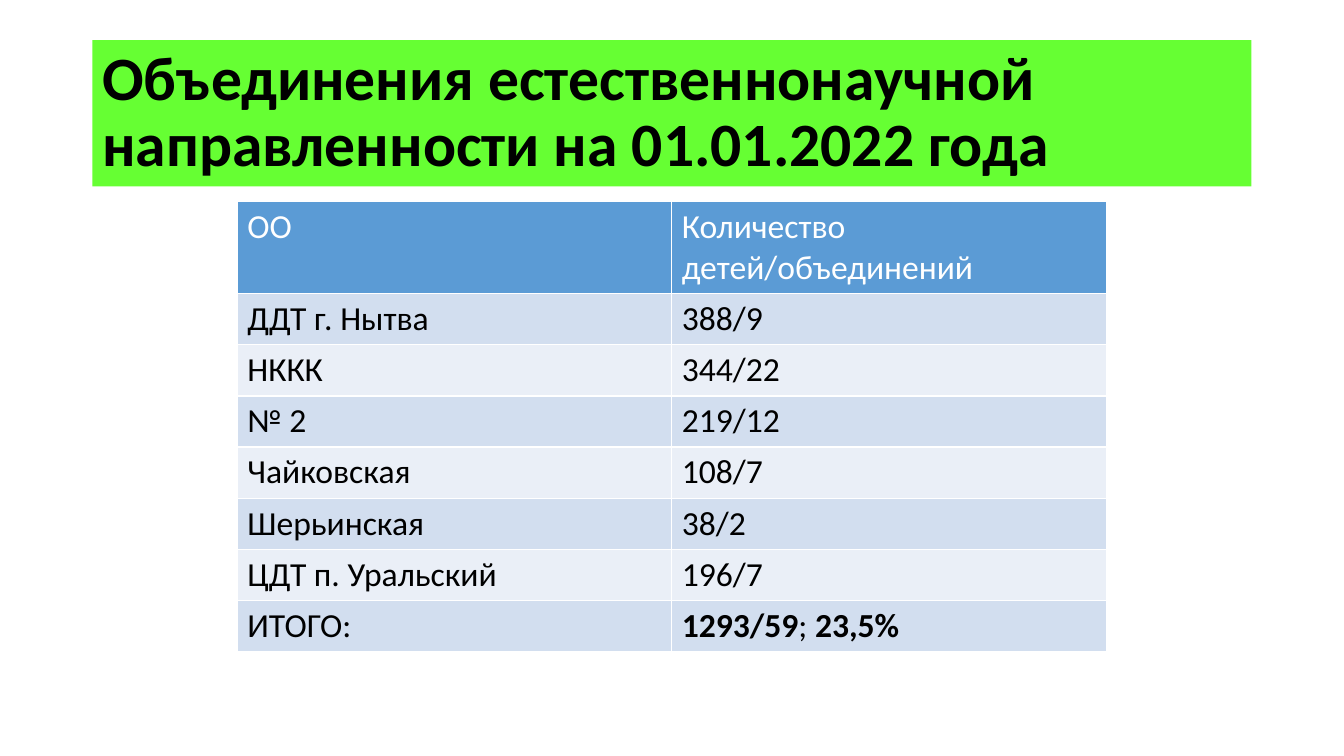
import pptx
import pptx.dml.color
import pptx.enum.shapes
import pptx.enum.text
import pptx.util

Pt = pptx.util.Pt
RGBColor = pptx.dml.color.RGBColor

# Content: each cell is a list of (text, bold) runs
HEADING = "Объединения естественнонаучной направленности на 01.01.2022 года"
COLUMNS = ("ОО", "Количество детей/объединений")
ORGANISATIONS = [
    ("ДДТ г. Нытва", "388/9"),
    ("НККК", "344/22"),
    ("№ 2", "219/12"),
    ("Чайковская", "108/7"),
    ("Шерьинская", "38/2"),
    ("ЦДТ п. Уральский", "196/7"),
]
TOTAL = [[("ИТОГО:", False)],
         [("1293/59", True), ("; ", False), ("23,5%", True)]]

# Colours and formats
GREEN = RGBColor(0x66, 0xFF, 0x33)
BLUE = RGBColor(0x5B, 0x9B, 0xD5)
BANDS = (RGBColor(0xEA, 0xEF, 0xF7), RGBColor(0xD2, 0xDE, 0xEF))
BLACK = RGBColor(0, 0, 0)
WHITE = RGBColor(0xFF, 0xFF, 0xFF)
HEADING_FONT = {"name": "Calibri", "size": Pt(44), "bold": True}
CELL_FONT = {"name": "Calibri", "size": Pt(24)}

# Layout
COLUMN_WIDTH, HEADER_HEIGHT, ROW_HEIGHT = 310.32, 64.8, 36


def add_run(paragraph, text, color, font_format):
    run = paragraph.add_run()
    run.text = text
    for attribute, value in font_format.items():
        setattr(run.font, attribute, value)
    run.font.color.rgb = color


presentation = pptx.Presentation()
presentation.slide_width, presentation.slide_height = Pt(960), Pt(540)
slide = presentation.slides.add_slide(presentation.slide_layouts[6])

# Heading bar
heading = slide.shapes.add_shape(
    pptx.enum.shapes.MSO_SHAPE.RECTANGLE, Pt(66), Pt(28.75), Pt(828), Pt(104.4))
heading.shadow.inherit = False
heading.fill.solid()
heading.fill.fore_color.rgb = GREEN
heading.line.fill.background()
heading.text_frame.word_wrap = True
heading.text_frame.vertical_anchor = pptx.enum.text.MSO_ANCHOR.MIDDLE
heading_line = heading.text_frame.paragraphs[0]
heading_line.alignment = pptx.enum.text.PP_ALIGN.LEFT
heading_line.line_spacing = 0.9
add_run(heading_line, HEADING, BLACK, HEADING_FONT)

# Table of organisations; its style draws the white borders
rows = [[[(text, False)] for text in row] for row in [COLUMNS, *ORGANISATIONS]]
rows.append(TOTAL)
table_height = HEADER_HEIGHT + ROW_HEIGHT * (len(rows) - 1)
counts = slide.shapes.add_table(
    len(rows), len(COLUMNS), Pt(169.5), Pt(144),
    Pt(COLUMN_WIDTH * len(COLUMNS)), Pt(table_height)).table
for column in counts.columns:
    column.width = Pt(COLUMN_WIDTH)

for r, row in enumerate(rows):
    is_header = r == 0
    counts.rows[r].height = Pt(HEADER_HEIGHT if is_header else ROW_HEIGHT)
    for c, runs in enumerate(row):
        cell = counts.cell(r, c)
        cell.fill.solid()
        cell.fill.fore_color.rgb = BLUE if is_header else BANDS[r % 2]
        for text, bold in runs:
            add_run(cell.text_frame.paragraphs[0], text,
                    WHITE if is_header else BLACK, {**CELL_FONT, "bold": bold})

presentation.save("out.pptx")
